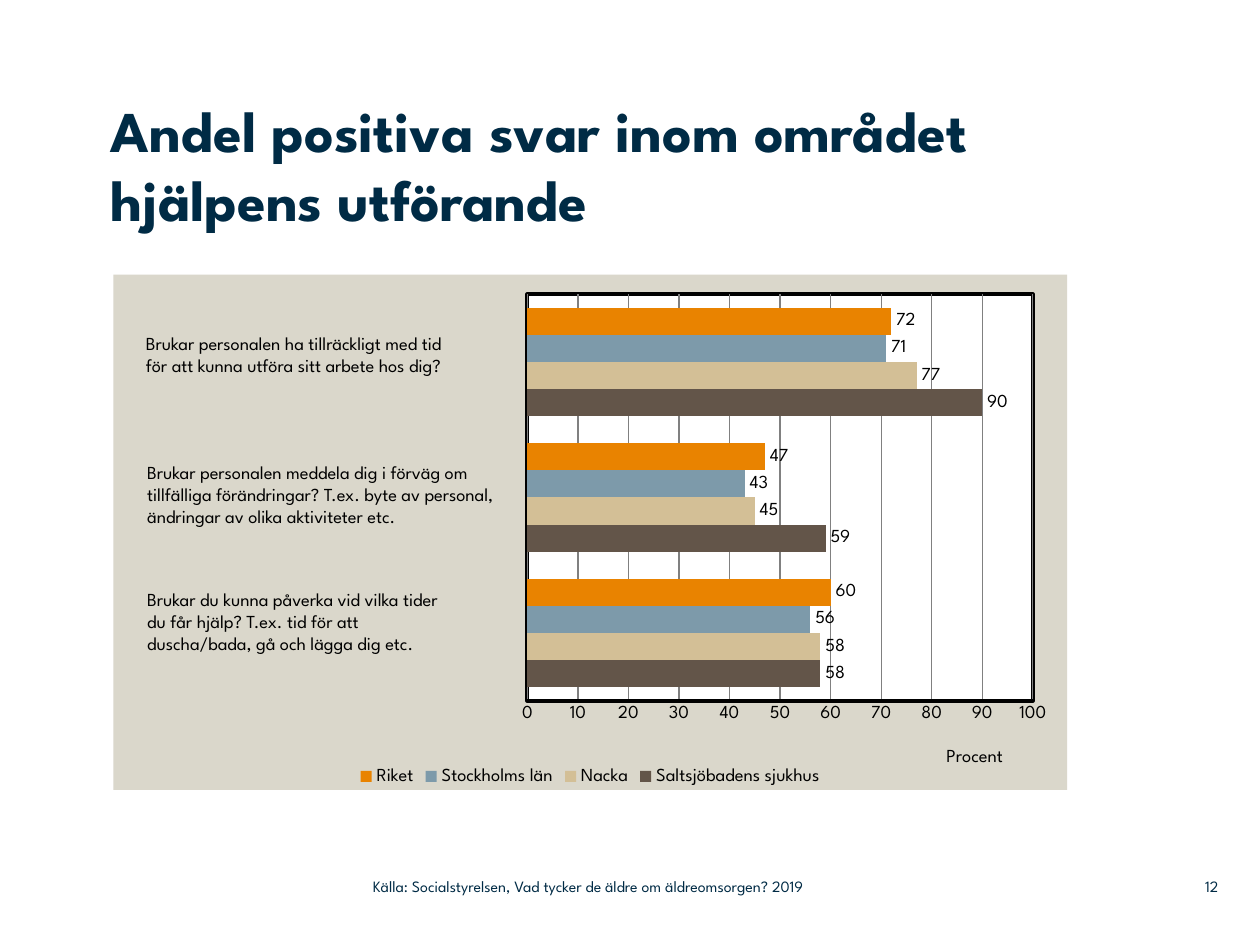
"""Build a slide with a clustered bar chart of positive answers about how help is given."""
from lxml import etree
from pptx import Presentation
from pptx.chart.data import CategoryChartData
from pptx.dml.color import RGBColor
from pptx.enum import chart as ec, text as et
from pptx.oxml import parse_xml
from pptx.oxml.ns import nsdecls, qn
from pptx.util import Inches, Pt

FONT = "League Spartan"
COLORS = {"navy": "002B45", "black": "000000", "white": "FFFFFF", "panel": "DAD7CB", "grid": "808080"}
TITLE = "Andel positiva svar inom området hjälpens utförande"
SOURCE = "Källa: Socialstyrelsen, Vad tycker de äldre om äldreomsorgen? 2019"
PAGE = "12"
CATEGORIES = ["1", "2", "3"]
SERIES = [
    ("Saltsjöbadens sjukhus", (58, 59, 90), "635549"),
    ("Nacka", (58, 45, 77), "D3BF96"),
    ("Stockholms län", (56, 43, 71), "7D9AAA"),
    ("Riket", (60, 47, 72), "E98300"),
]
QUESTIONS = [
    ((1.06, 2.59, 2.99, 0.45),
     ["Brukar personalen ha tillräckligt med tid", "för att kunna utföra sitt arbete hos dig?"]),
    ((1.07, 3.61, 2.97, 0.81),
     ["Brukar personalen meddela dig i förväg om tillfälliga förändringar? "
      "T.ex. byte av personal, ändringar av olika aktiviteter etc."]),
    ((1.07, 4.62, 2.97, 0.63),
     ["Brukar du kunna påverka vid vilka tider", "du får hjälp? T.ex. tid för att",
      "duscha/bada, gå och lägga dig etc."]),
]


def rgb(color):
    return RGBColor.from_string(color)


def style_font(font, size=10.5, color=COLORS["black"], bold=False):
    font.name, font.size, font.bold = FONT, Pt(size), bold
    font.color.rgb = rgb(color)


def add_text(slide, box, lines, size=10.5, color=COLORS["black"], bold=False,
             anchor=et.MSO_ANCHOR.TOP, align=et.PP_ALIGN.LEFT, inset=True):
    frame = slide.shapes.add_textbox(*map(Inches, box)).text_frame
    frame.word_wrap = True
    frame.vertical_anchor = anchor
    if not inset:
        frame.margin_left = frame.margin_top = frame.margin_right = frame.margin_bottom = 0
    for index, line in enumerate(lines):
        paragraph = frame.paragraphs[0] if index == 0 else frame.add_paragraph()
        paragraph.alignment = align
        run = paragraph.add_run()
        run.text = line
        style_font(run.font, size, color, bold)


def set_layout(element, position, **values):
    """Place a chart part by fractions of the chart area."""
    for old in element.findall(qn("c:layout")):
        element.remove(old)
    layout = parse_xml(f"<c:layout {nsdecls('c')}><c:manualLayout/></c:layout>")
    for tag, value in values.items():
        etree.SubElement(layout[0], qn(f"c:{tag}")).set("val", str(value))
    element.insert(position, layout)


def add_plot_format(plot_area):
    plot_area.append(parse_xml(
        f"<c:spPr {nsdecls('c', 'a')}><a:solidFill><a:srgbClr val='{COLORS['white']}'/></a:solidFill>"
        f"<a:ln w='{Pt(2.25)}'><a:solidFill><a:srgbClr val='{COLORS['black']}'/></a:solidFill></a:ln></c:spPr>"))


def add_chart_format(chart_space):
    chart_space.find(qn("c:chart")).addnext(parse_xml(
        f"<c:spPr {nsdecls('c', 'a')}><a:solidFill><a:srgbClr val='{COLORS['panel']}'/></a:solidFill>"
        "<a:ln><a:noFill/></a:ln></c:spPr>"))


def add_bar_chart(slide):
    data = CategoryChartData()
    data.categories = CATEGORIES
    for name, values, _ in SERIES:
        data.add_series(name, values)
    box = map(Inches, (0.9, 2.18, 7.57, 4.09))
    chart = slide.shapes.add_chart(ec.XL_CHART_TYPE.BAR_CLUSTERED, *box, data).chart
    style_font(chart.font)
    chart.has_title = False
    chart.has_legend = True
    chart.legend.position = ec.XL_LEGEND_POSITION.BOTTOM
    chart.legend.include_in_layout = False
    style_font(chart.legend.font)

    plot = chart.plots[0]
    plot.gap_width, plot.overlap, plot.vary_by_categories = 100, 0, False
    for series, (_, _, color) in zip(plot.series, SERIES):
        series.format.fill.solid()
        series.format.fill.fore_color.rgb = rgb(color)
        labels = series.data_labels
        labels.show_value = True
        labels.position = ec.XL_LABEL_POSITION.OUTSIDE_END
        style_font(labels.font)

    chart.category_axis.visible = False
    axis = chart.value_axis
    axis.minimum_scale, axis.maximum_scale, axis.major_unit = 0, 100, 10
    axis.major_tick_mark = axis.minor_tick_mark = ec.XL_TICK_MARK.NONE
    axis.has_major_gridlines = True
    for line, color, width in ((axis.major_gridlines.format.line, COLORS["grid"], 0.75),
                               (axis.format.line, COLORS["black"], 2)):
        line.color.rgb = rgb(color)
        line.width = Pt(width)
    style_font(axis.tick_labels.font)
    axis.axis_title.text_frame.text = "Procent"
    style_font(axis.axis_title.text_frame.paragraphs[0].runs[0].font)

    chart_space = plot._element.getroottree().getroot()
    plot_area = chart_space.find(f".//{qn('c:plotArea')}")
    set_layout(plot_area, 0, layoutTarget="inner", xMode="edge", yMode="edge",
               x=0.434, y=0.038, w=0.53, h=0.789)
    set_layout(plot_area.find(f".//{qn('c:valAx')}/{qn('c:title')}"), 1,
               xMode="edge", yMode="edge", x=0.87, y=0.91)
    add_plot_format(plot_area)
    add_chart_format(chart_space)


def main():
    presentation = Presentation()
    presentation.slide_width, presentation.slide_height = Inches(10), Inches(7.5)
    slide = presentation.slides.add_slide(presentation.slide_layouts[6])
    add_bar_chart(slide)
    add_text(slide, (0.88, 0.75, 7.6, 1.42), [TITLE], size=33, color=COLORS["navy"], bold=True, inset=False)
    for box, lines in QUESTIONS:
        add_text(slide, box, lines)
    footer = {"size": 9, "color": COLORS["navy"], "anchor": et.MSO_ANCHOR.MIDDLE, "inset": False}
    add_text(slide, (9.2, 6.89, 0.47, 0.29), [PAGE], align=et.PP_ALIGN.RIGHT, **footer)
    add_text(slide, (2.96, 6.89, 4.43, 0.29), [SOURCE], **footer)
    presentation.save("out.pptx")


if __name__ == "__main__":
    main()
